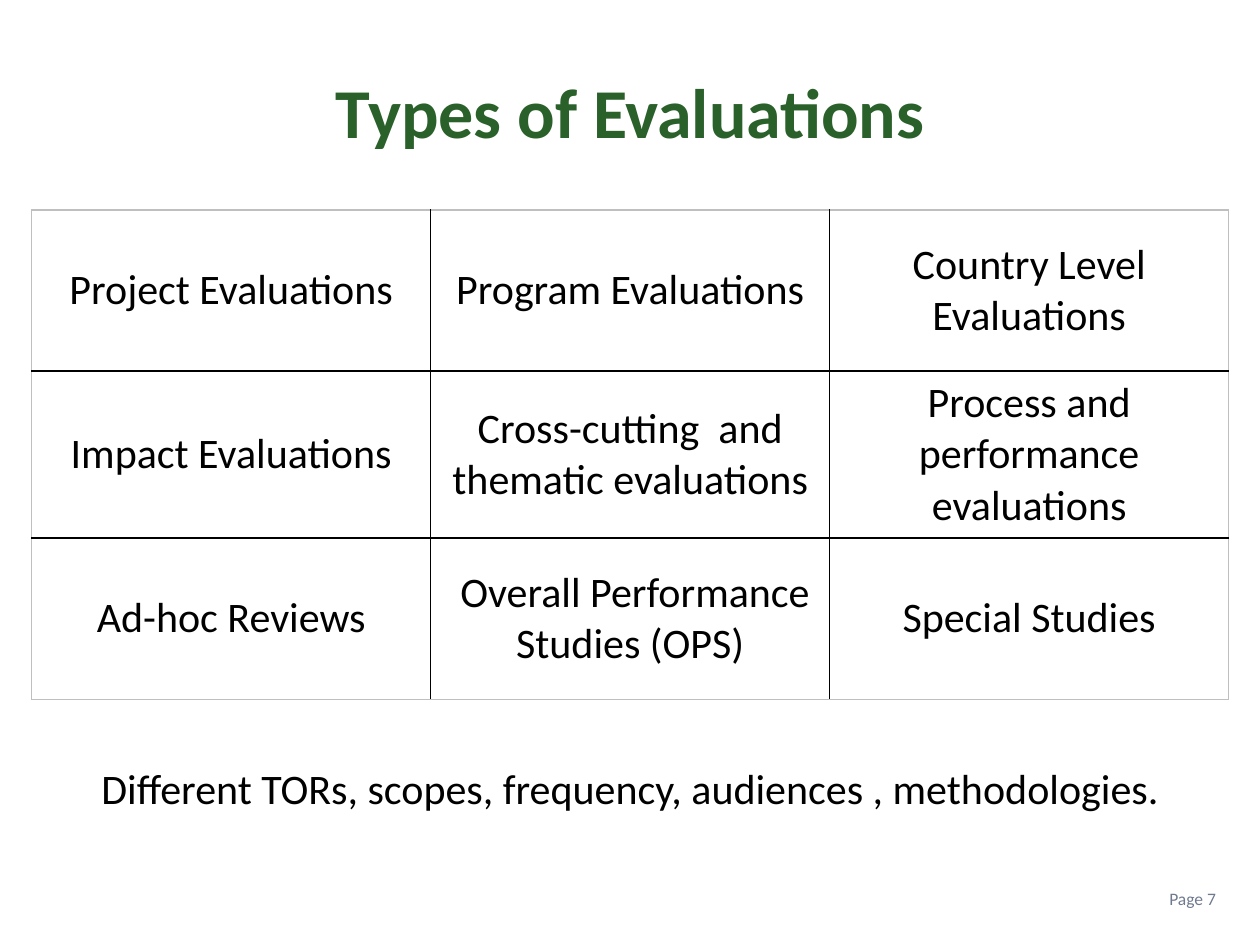
from lxml.etree import SubElement
from pptx import Presentation
from pptx.dml.color import RGBColor
from pptx.enum.text import MSO_ANCHOR, PP_ALIGN
from pptx.oxml.ns import qn
from pptx.util import Cm, Pt

GREEN = RGBColor(0x2A, 0x60, 0x2A)
BLACK = RGBColor(0x00, 0x00, 0x00)
SLATE = RGBColor(0x6F, 0x7A, 0x8F)
GREY = RGBColor(0xBF, 0xBF, 0xBF)

LEFT, WIDE = Cm(0.64), Cm(24.13)
KINDS = [
    ["Project Evaluations", "Program Evaluations", "Country Level Evaluations"],
    ["Impact Evaluations", "Cross-cutting  and thematic evaluations",
     "Process and performance evaluations"],
    ["Ad-hoc Reviews", " Overall Performance Studies (OPS)", "Special Studies"],
]


def write(frame, text, size, color, align=PP_ALIGN.CENTER, bold=False):
    frame.word_wrap = True
    para = frame.paragraphs[0]
    para.alignment = align
    run = para.add_run()
    run.text = text
    run.font.name = "Calibri"
    run.font.size = Pt(size)
    run.font.bold = bold
    run.font.color.rgb = color


def edge(cell, side, color):
    line = SubElement(cell._tc.get_or_add_tcPr(), qn("a:" + side), w=str(Pt(1)))
    fill = SubElement(line, qn("a:solidFill"))
    SubElement(fill, qn("a:srgbClr"), val=str(color))


deck = Presentation()
deck.slide_width, deck.slide_height = Cm(25.4), Cm(19.05)
slide = deck.slides.add_slide(deck.slide_layouts[5])

# Title
title = slide.shapes.title
title.left, title.top, title.width, title.height = LEFT, Cm(0.64), WIDE, Cm(3.18)
title.text_frame.vertical_anchor = MSO_ANCHOR.MIDDLE
write(title.text_frame, "Types of Evaluations", 40, GREEN, bold=True)

# Table of evaluation types
count = len(KINDS)
table = slide.shapes.add_table(count, count, LEFT, Cm(4.23), WIDE, Cm(9.76)).table
table.first_row = table.horz_banding = False
last = count - 1
for r, row in enumerate(KINDS):
    for c, text in enumerate(row):
        cell = table.cell(r, c)
        cell.vertical_anchor = MSO_ANCHOR.MIDDLE
        cell.margin_left = cell.margin_right = Cm(0.3)
        cell.margin_top = cell.margin_bottom = Cm(0.13)
        write(cell.text_frame, text, 24, BLACK)
        # Grey frame, black inner lines; the fill follows the lines
        outer = {"lnL": c == 0, "lnR": c == last, "lnT": r == 0, "lnB": r == last}
        for side, rim in outer.items():
            edge(cell, side, GREY if rim else BLACK)
        cell.fill.background()

# Closing line
note = slide.shapes.add_textbox(LEFT, Cm(15.24), WIDE, Cm(1.27))
write(note.text_frame, "Different TORs, scopes, frequency, audiences , methodologies.",
      24, BLACK)

# Page number
page = slide.shapes.add_textbox(Cm(22.02), Cm(17.78), Cm(2.74), Cm(0.84))
write(page.text_frame, "Page 7", 10, SLATE, PP_ALIGN.RIGHT)

deck.save("out.pptx")
